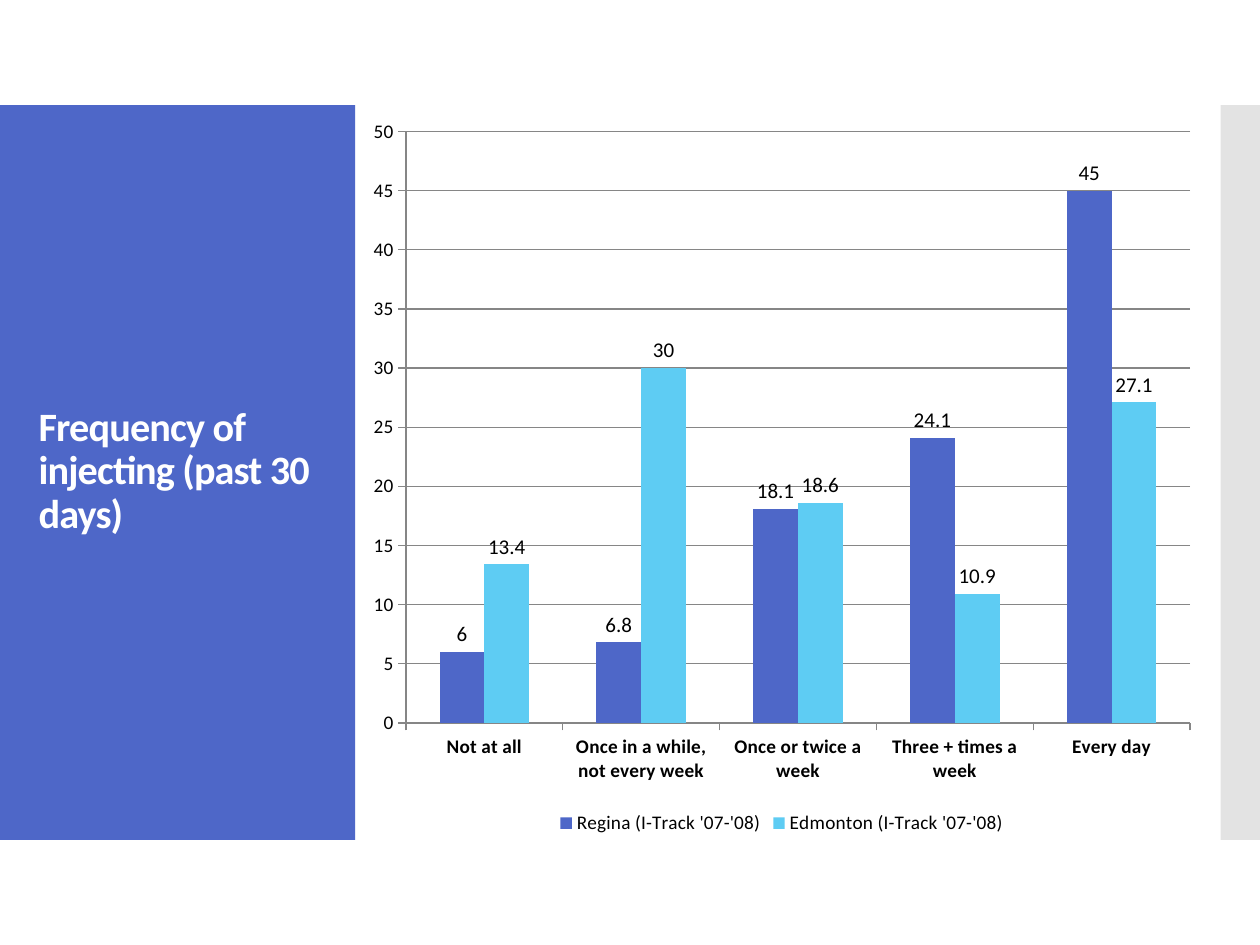
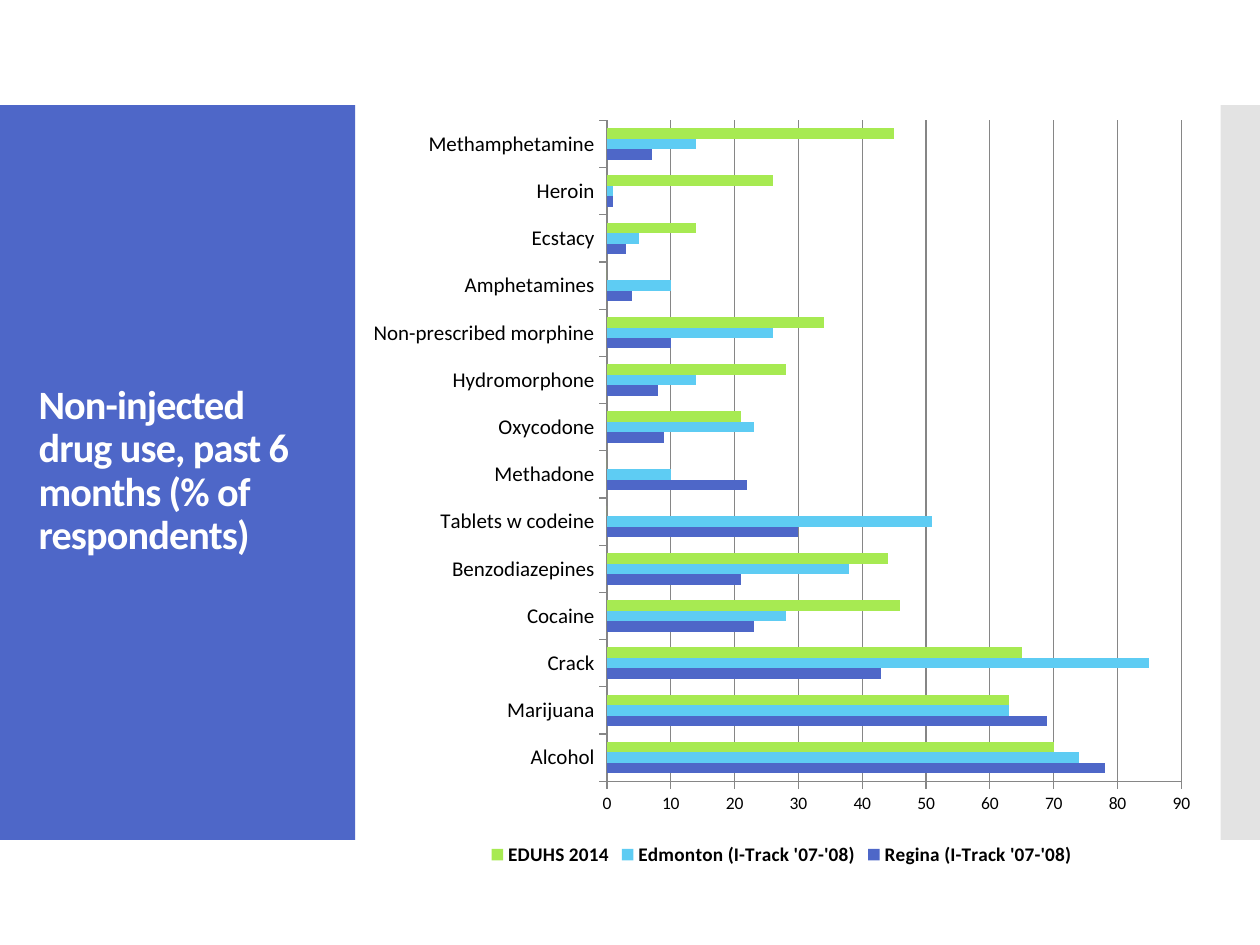
from dataclasses import dataclass

from lxml import etree
from pptx import Presentation
from pptx.chart.data import CategoryChartData
from pptx.dml.color import RGBColor
from pptx.enum.chart import XL_CHART_TYPE, XL_LABEL_POSITION, XL_LEGEND_POSITION, XL_TICK_MARK
from pptx.enum.shapes import MSO_SHAPE
from pptx.enum.text import MSO_ANCHOR
from pptx.oxml.ns import qn
from pptx.util import Pt

COLUMN = XL_CHART_TYPE.COLUMN_CLUSTERED
BAR = XL_CHART_TYPE.BAR_CLUSTERED
BOTTOM = XL_LEGEND_POSITION.BOTTOM
ABOVE = XL_LABEL_POSITION.OUTSIDE_END
OUT, NONE = XL_TICK_MARK.OUTSIDE, XL_TICK_MARK.NONE
RECT = MSO_SHAPE.RECTANGLE
MIDDLE = MSO_ANCHOR.MIDDLE


@dataclass(frozen=True)
class Theme:
    font: str = "Calibri"
    blue: str = "4E67C8"
    sky: str = "5ECCF3"
    lime: str = "A7EA52"
    strip: str = "C8C8C8"
    grid: str = "868686"
    white: str = "FFFFFF"
    black: str = "000000"
    title: float = 23
    label: float = 12
    text: float = 11
    small: float = 10


THEME = Theme()
WIDTH, HEIGHT = 720, 540
PANEL = (0, 60, 203, 420)
STRIP = (697.5, 60, 22.5, 420)
PLOT = (203.75, 60, 486, 420)
TALL = (203.75, 60, 486, 438)

REGINA = "Regina (I-Track '07-'08)"
EDMONTON = "Edmonton (I-Track '07-'08)"

OFTEN = [
    ("Not at all", 6, 13.4),
    ("Once in a while, not every week", 6.8, 30),
    ("Once or twice a week", 18.1, 18.6),
    ("Three + times a week", 24.1, 10.9),
    ("Every day", 45, 27.1),
]
DRUGS = [
    ("Alcohol", 78, 74, 70),
    ("Marijuana", 69, 63, 63),
    ("Crack", 43, 85, 65),
    ("Cocaine", 23, 28, 46),
    ("Benzodiazepines", 21, 38, 44),
    ("Tablets w codeine", 30, 51, 0),
    ("Methadone", 22, 10, 0),
    ("Oxycodone", 9, 23, 21),
    ("Hydromorphone", 8, 14, 28),
    ("Non-prescribed morphine", 10, 26, 34),
    ("Amphetamines", 4, 10, 0),
    ("Ecstacy", 3, 5, 14),
    ("Heroin", 1, 1, 26),
    ("Methamphetamine", 7, 14, 45),
]


def place(box):
    return [Pt(side) for side in box]


def style(font, size, color=THEME.black, bold=False):
    font.name = THEME.font
    font.size = Pt(size)
    font.bold = bold
    font.color.rgb = RGBColor.from_string(color)


def add_band(slide, box, color, alpha=100):
    """Draw a plain block; alpha is its opacity in percent."""
    band = slide.shapes.add_shape(RECT, *place(box))
    band.shadow.inherit = False
    band.line.fill.background()
    band.fill.solid()
    band.fill.fore_color.rgb = RGBColor.from_string(color)
    if alpha < 100:
        tint = band._element.spPr.find(".//" + qn("a:srgbClr"))
        etree.SubElement(tint, qn("a:alpha")).set("val", str(alpha * 1000))


def add_title(slide, box, text):
    """Set the title inside the panel box, centred from top to bottom."""
    left, top, width, height = box
    inner = (left + 15, top + 28.5, width - 29, height - 58)
    frame = slide.shapes.add_textbox(*place(inner)).text_frame
    frame.word_wrap = True
    frame.vertical_anchor = MIDDLE
    para = frame.paragraphs[0]
    para.line_spacing = 0.9
    run = para.add_run()
    run.text = text
    style(run.font, THEME.title, THEME.white, True)
    run._r.get_or_add_rPr().set("spc", "-50")


def add_frame(slide, title):
    add_band(slide, PANEL, THEME.blue)
    add_band(slide, STRIP, THEME.strip, 50)
    add_title(slide, PANEL, title)


def add_plot(slide, box, kind, names, rows, size, top, step):
    """Add a clustered chart; each row is a category and its values."""
    data = CategoryChartData()
    cats, *columns = zip(*rows)
    data.categories = cats
    for name, values in zip(names, columns):
        data.add_series(name, values)
    chart = slide.shapes.add_chart(kind, *place(box), data).chart
    style(chart.font, size)
    chart.has_title = False
    chart.has_legend = True
    chart.legend.position = BOTTOM
    chart.legend.include_in_layout = False

    plot = chart.plots[0]
    plot.vary_by_categories = False
    plot.gap_width = 150
    plot.overlap = 0
    for series, color in zip(plot.series, (THEME.blue, THEME.sky, THEME.lime)):
        series.invert_if_negative = False
        series.format.fill.solid()
        series.format.fill.fore_color.rgb = RGBColor.from_string(color)

    scale = chart.value_axis
    scale.minimum_scale, scale.maximum_scale = 0, top
    scale.major_unit = step
    scale.has_major_gridlines = True
    lines = [scale.major_gridlines.format.line]
    for axis in (scale, chart.category_axis):
        axis.major_tick_mark = OUT
        axis.minor_tick_mark = NONE
        lines.append(axis.format.line)
    for line in lines:
        line.width = Pt(0.75)
        line.color.rgb = RGBColor.from_string(THEME.grid)
    return chart


def add_often(slide):
    add_frame(slide, "Frequency of injecting (past 30 days)")
    chart = add_plot(slide, PLOT, COLUMN, (REGINA, EDMONTON), OFTEN, THEME.text, 50, 5)
    style(chart.category_axis.tick_labels.font, THEME.text, bold=True)
    for series in chart.plots[0].series:
        labels = series.data_labels
        labels.show_value = True
        labels.position = ABOVE
        style(labels.font, THEME.label)


def add_drugs(slide):
    add_frame(slide, "Non-injected drug use, past 6 months (% of respondents)")
    names = (REGINA, EDMONTON, "EDUHS 2014")
    chart = add_plot(slide, TALL, BAR, names, DRUGS, THEME.small, 90, 10)
    style(chart.category_axis.tick_labels.font, THEME.label)
    style(chart.legend.font, THEME.text, bold=True)


def main():
    deck = Presentation()
    deck.slide_width, deck.slide_height = Pt(WIDTH), Pt(HEIGHT)
    blank = deck.slide_layouts[6]
    for build in (add_often, add_drugs):
        build(deck.slides.add_slide(blank))
    deck.save("out.pptx")


if __name__ == "__main__":
    main()
